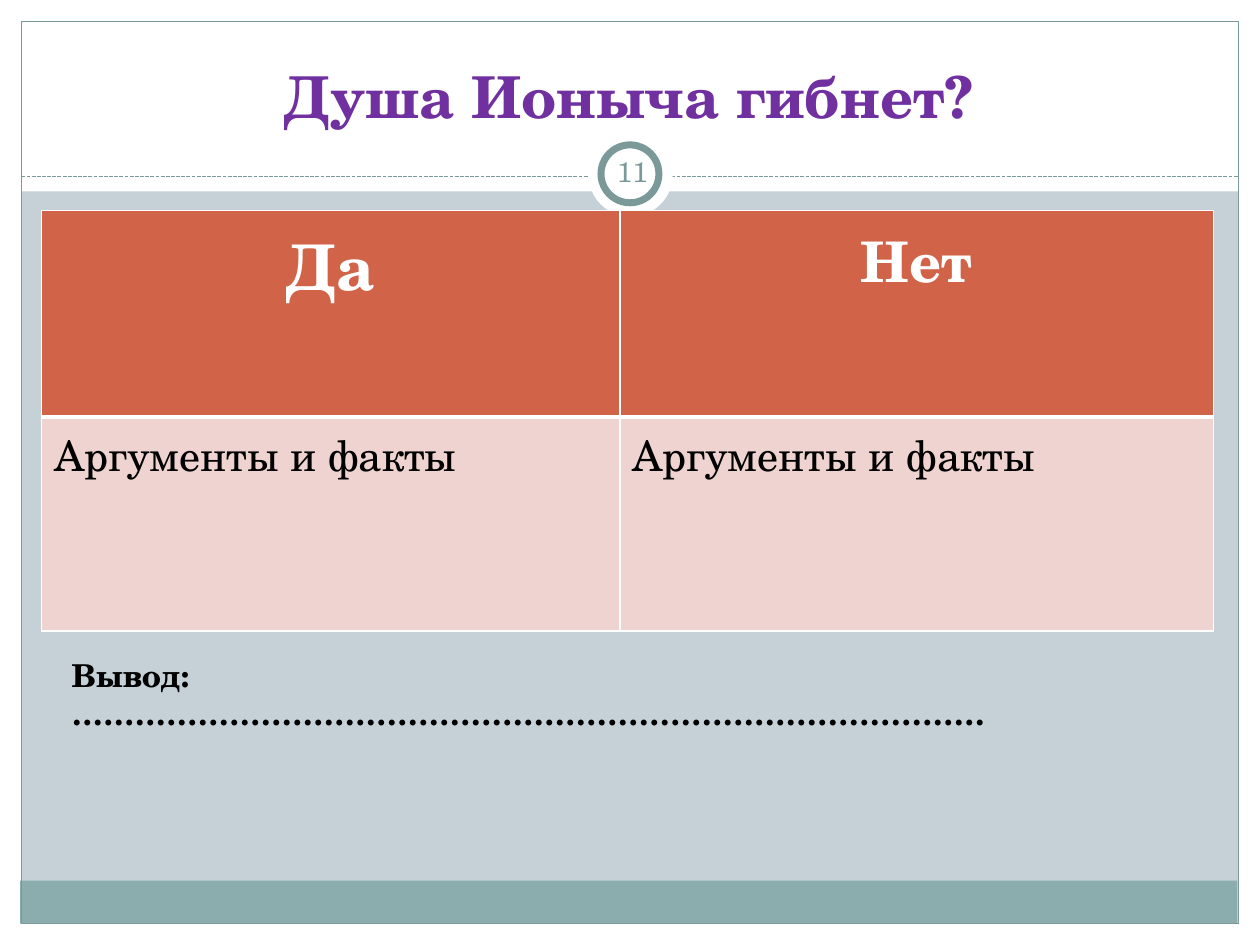
from lxml import etree
from pptx import Presentation
from pptx.dml.color import RGBColor
from pptx.enum.dml import MSO_LINE
from pptx.enum.shapes import MSO_CONNECTOR, MSO_SHAPE
from pptx.enum.text import MSO_ANCHOR, PP_ALIGN
from pptx.oxml.ns import qn
from pptx.util import Inches, Pt

RECT, OVAL = MSO_SHAPE.RECTANGLE, MSO_SHAPE.OVAL
STRAIGHT, DASH = MSO_CONNECTOR.STRAIGHT, MSO_LINE.SQUARE_DOT
CENTER, LEFT = PP_ALIGN.CENTER, PP_ALIGN.LEFT
TOP, MIDDLE, BOTTOM = MSO_ANCHOR.TOP, MSO_ANCHOR.MIDDLE, MSO_ANCHOR.BOTTOM

FONT = "TeX Gyre Schola"
WHITE = RGBColor(0xFF, 0xFF, 0xFF)
BLACK = RGBColor(0, 0, 0)
BACKGROUND = RGBColor(0xC5, 0xD1, 0xD7)
TEAL = RGBColor(0x8C, 0xAD, 0xAE)
OUTLINE = RGBColor(0x7C, 0x99, 0x9A)
PURPLE = RGBColor(0x70, 0x30, 0xA0)
HEADER = RGBColor(0xD1, 0x63, 0x49)
BODY = RGBColor(0xEE, 0xD3, 0xD0)


def add_panel(s, kind, box, fill=None, line_width=None):
    """Add a preset shape with an optional fill and outline."""
    sp = s.shapes.add_shape(kind, *map(Inches, box))
    sp.shadow.inherit = False
    if fill is None:
        sp.fill.background()
    else:
        sp.fill.solid()
        sp.fill.fore_color.rgb = fill
    if line_width is None:
        sp.line.fill.background()
    else:
        sp.line.color.rgb = OUTLINE
        sp.line.width = Pt(line_width)


def add_divider(s, left, right, y):
    """Add the dashed horizontal line under the title."""
    line = s.shapes.add_connector(
        STRAIGHT, Inches(left), Inches(y), Inches(right), Inches(y))
    line.line.color.rgb = OUTLINE
    line.line.width = Pt(0.75)
    line.line.dash_style = DASH
    etree.SubElement(line.element.spPr, qn("a:effectLst"))


def write(tf, text, size, color, bold=False, align=LEFT):
    """Write one formatted paragraph into a text frame."""
    tf.text = text
    tf.word_wrap = True
    p = tf.paragraphs[0]
    p.alignment = align
    p.font.name = FONT
    p.font.size = Pt(size)
    p.font.bold = bold
    p.font.color.rgb = color


def add_text(s, box, text, size, color, bold=False, align=LEFT, anchor=TOP, inset=None):
    """Add a text box with one paragraph."""
    tf = s.shapes.add_textbox(*map(Inches, box)).text_frame
    write(tf, text, size, color, bold, align)
    tf.vertical_anchor = anchor
    if inset is not None:
        tf.margin_left = tf.margin_right = Inches(inset)
        tf.margin_top = tf.margin_bottom = Inches(inset)


def set_title(s, box, text):
    """Format the title placeholder and bring it to the front."""
    title = s.shapes.title
    title.left, title.top, title.width, title.height = map(Inches, box)
    write(title.text_frame, text, 33, PURPLE, True, CENTER)
    title.text_frame.vertical_anchor = BOTTOM
    title.element.getparent().append(title.element)


def set_borders(cell, widths):
    """Draw white left, right, top and bottom borders of a cell."""
    tc_pr = cell._tc.get_or_add_tcPr()
    for side, width in zip("LRTB", widths):
        ln = etree.SubElement(tc_pr, qn(f"a:ln{side}"), w=str(Pt(width)))
        fill = etree.SubElement(ln, qn("a:solidFill"))
        etree.SubElement(fill, qn("a:srgbClr"), val=str(WHITE))


def add_arguments_table(s):
    """Add the two-column table of arguments."""
    header = [("Да", 36), ("Нет", 32)]
    body = [("Аргументы и факты", 24)] * 2
    rows = [
        (header, 1.64, HEADER, WHITE, True, CENTER, (1, 1, 1, 3)),
        (body, 1.7, BODY, BLACK, False, LEFT, (1, 1, 3, 1)),
    ]
    table = s.shapes.add_table(
        2, 2, Inches(0.33), Inches(1.67), Inches(9.3), Inches(3.34)).table
    for column, width in zip(table.columns, (4.59, 4.71)):
        column.width = Inches(width)
    for row, (texts, height, fill, color, bold, align, borders) in zip(table.rows, rows):
        row.height = Inches(height)
        for cell, (text, size) in zip(row.cells, texts):
            write(cell.text_frame, text, size, color, bold, align)
            set_borders(cell, borders)
            cell.fill.solid()
            cell.fill.fore_color.rgb = fill


def main():
    """Build the slide and save it."""
    prs = Presentation()
    prs.slide_width, prs.slide_height = Inches(10), Inches(7.5)
    s = prs.slides.add_slide(prs.slide_layouts[5])
    s.background.fill.solid()
    s.background.fill.fore_color.rgb = BACKGROUND

    margins = [(0, 7.33, 10, 0.17), (0, 0, 10, 1.52),
               (0, 0, 0.17, 7.5), (9.83, 0, 0.17, 7.5)]
    for box in margins:
        add_panel(s, RECT, box, WHITE)
    add_panel(s, RECT, (0.16, 6.99, 9.66, 0.34), TEAL)
    add_panel(s, RECT, (0.17, 0.17, 9.66, 7.16), line_width=0.75)
    add_divider(s, 0.17, 9.83, 1.4)
    add_panel(s, OVAL, (4.67, 1.05, 0.67, 0.67), WHITE)
    add_panel(s, OVAL, (4.77, 1.15, 0.46, 0.46), WHITE, 4)

    set_title(s, (0.33, 0.25, 9.33, 0.83), "Душа Ионыча гибнет?")
    add_text(s, (4.77, 1.12, 0.5, 0.48), "11", 16, OUTLINE,
             align=CENTER, anchor=MIDDLE, inset=0.05)
    add_arguments_table(s)
    add_text(s, (0.47, 5.16, 8.17, 0.4), "Вывод: " + "…" * 29, 18, BLACK, True)
    prs.save("out.pptx")


if __name__ == "__main__":
    main()
